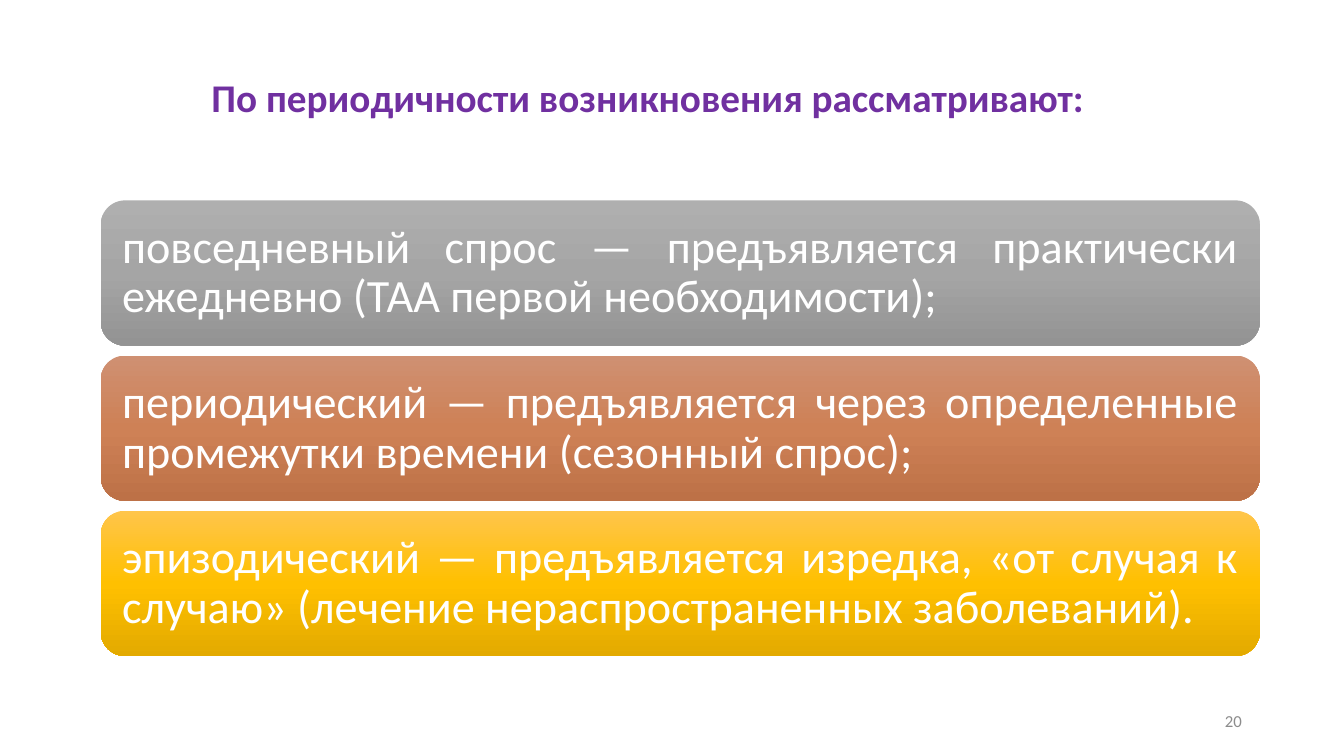
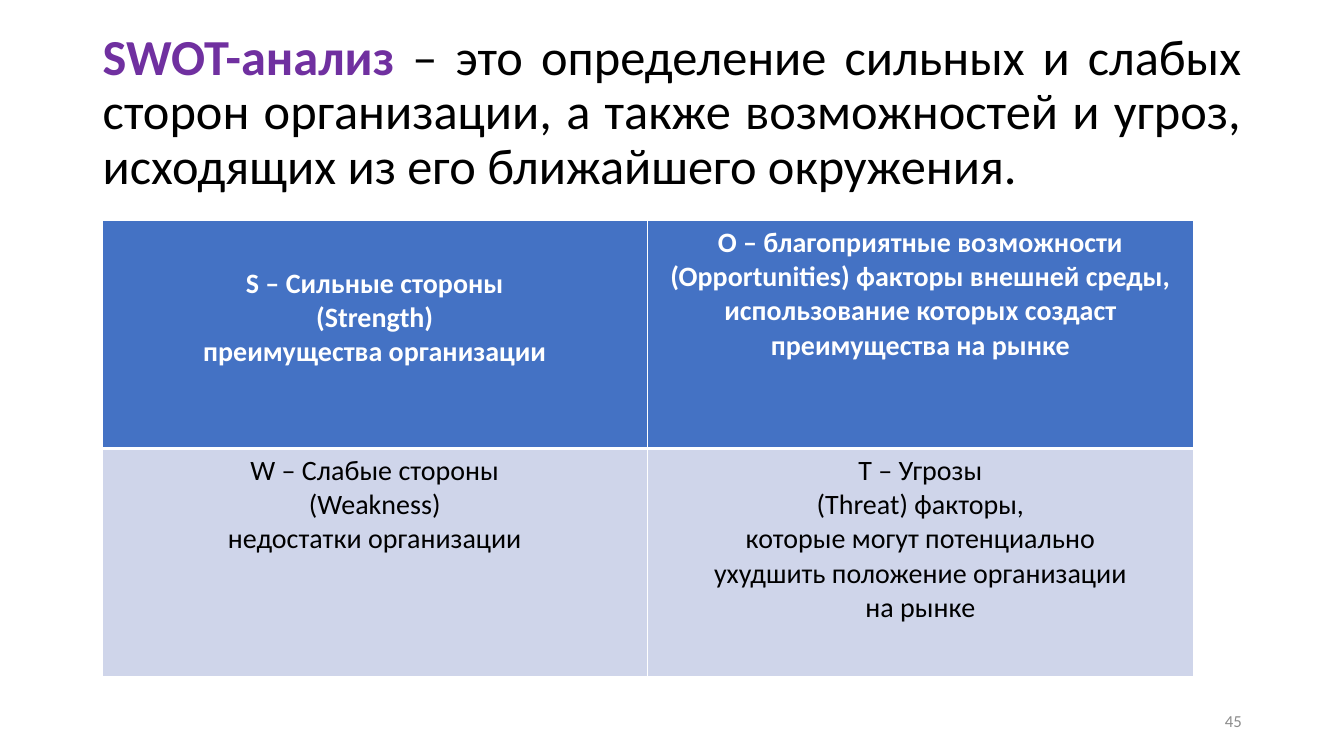
import copy
from lxml import etree
import pptx
import pptx.dml.color
import pptx.enum.shapes
import pptx.enum.text
import pptx.oxml.ns
import pptx.util

Cm = pptx.util.Cm
Pt = pptx.util.Pt
Align = pptx.enum.text.PP_ALIGN
Anchor = pptx.enum.text.MSO_ANCHOR
qn = pptx.oxml.ns.qn


class Theme:
    font = "Calibri"
    accent = "7030A0"
    black = "000000"
    white = "FFFFFF"
    number = "8C8C8C"
    header = "4472C4"
    body = "CFD5EA"
    heading_size = 28
    title_size = 36
    band_size = 33
    cell_size = 20
    number_size = 12


DEMAND_HEADING = "По периодичности возникновения рассматривают:"
DEMAND_BANDS = [
    ("повседневный спрос — предъявляется практически ежедневно (ТАА первой необходимости);",
     ("AFAFAF", "A5A5A5", "939393")),
    ("периодический — предъявляется через определенные промежутки времени (сезонный спрос);",
     ("CF9072", "CE8156", "BD7147")),
    ("эпизодический — предъявляется изредка, «от случая к случаю» (лечение нераспространенных заболеваний).",
     ("FFC54B", "FFC000", "E3AA00")),
]
SWOT_TERM = "SWOT-анализ"
SWOT_DEFINITION = (" – это определение сильных и слабых сторон организации, "
                   "а также возможностей и угроз, исходящих из его ближайшего окружения.")
SWOT_CELLS = [
    [
        ["S – Сильные стороны", "(Strength)", "преимущества организации"],
        ["О – благоприятные возможности", "(Opportunities) факторы внешней среды,",
         "использование которых создаст", "преимущества на рынке"],
    ],
    [
        ["W – Слабые стороны", "(Weakness)", "недостатки организации"],
        ["Т – Угрозы", "(Threat) факторы,", "которые могут потенциально",
         "ухудшить положение организации", "на рынке"],
    ],
]
SWOT_ROWS = [
    {"fill": Theme.header, "text": Theme.white, "bold": True, "top": 1, "bottom": 3},
    {"fill": Theme.body, "text": Theme.black, "bold": False, "top": 3, "bottom": 1},
]
STRENGTH_TOP_MARGIN = Cm(1.16)


def rgb(color):
    return pptx.dml.color.RGBColor.from_string(color)


def apply_format(target, values):
    for name, value in values.items():
        setattr(target, name, value)


def add_para(frame, spans, size, first=True, **layout):
    para = frame.paragraphs[0] if first else frame.add_paragraph()
    apply_format(para, layout)
    for text, color, bold in spans:
        span = para.add_run()
        span.text = text
        apply_format(span.font, {"name": Theme.font, "size": Pt(size), "bold": bold})
        span.font.color.rgb = rgb(color)


def add_text(page, place, spans, size, wrap=True, anchor=Anchor.MIDDLE, **layout):
    box = page.shapes.add_textbox(*map(Cm, place))
    apply_format(box.text_frame, {"word_wrap": wrap, "vertical_anchor": anchor})
    add_para(box.text_frame, spans, size, **layout)


def add_page(deck, number):
    page = deck.slides.add_slide(deck.slide_layouts[6])
    add_text(page, (23.93, 17.65, 7.62, 1.01), [(number, Theme.number, False)],
             Theme.number_size, alignment=Align.RIGHT)
    return page


def fill_gradient(shape, colors):
    shape.fill.gradient()
    shape.fill.gradient_angle = 270
    stop_list = shape._element.spPr.find(qn("a:gradFill")).find(qn("a:gsLst"))
    stop_list.append(copy.deepcopy(stop_list[0]))
    for index, (stop, color) in enumerate(zip(shape.fill.gradient_stops, colors)):
        stop.position = index / (len(colors) - 1)
        stop.color.rgb = rgb(color)


def add_band(page, top, text, colors):
    band = page.shapes.add_shape(pptx.enum.shapes.MSO_SHAPE.ROUNDED_RECTANGLE,
                                 Cm(2.54), Cm(top), Cm(29.21), Cm(3.66))
    band.shadow.inherit = False
    band.line.fill.background()
    fill_gradient(band, colors)
    margins = {"margin_" + side: Cm(0.36) for side in ("left", "top", "right", "bottom")}
    apply_format(band.text_frame,
                 {"word_wrap": True, "vertical_anchor": Anchor.MIDDLE, **margins})
    add_para(band.text_frame, [(text, Theme.white, False)], Theme.band_size,
             alignment=Align.JUSTIFY, line_spacing=0.9)


def add_borders(cell, top, bottom):
    properties = cell._tc.get_or_add_tcPr()
    for tag, width in (("lnL", 1), ("lnR", 1), ("lnT", top), ("lnB", bottom)):
        line = etree.SubElement(properties, qn("a:" + tag), w=str(Pt(width)))
        fill = etree.SubElement(line, qn("a:solidFill"))
        etree.SubElement(fill, qn("a:srgbClr"), val=Theme.white)


def add_swot_table(page):
    table = page.shapes.add_table(len(SWOT_CELLS), len(SWOT_CELLS[0]),
                                  Cm(2.57), Cm(5.56), Cm(27.5), Cm(11.48)).table
    for row, (contents, style) in enumerate(zip(SWOT_CELLS, SWOT_ROWS)):
        for column, lines in enumerate(contents):
            cell = table.cell(row, column)
            add_borders(cell, style["top"], style["bottom"])
            cell.fill.solid()
            cell.fill.fore_color.rgb = rgb(style["fill"])
            for index, text in enumerate(lines):
                add_para(cell.text_frame, [(text, style["text"], style["bold"])],
                         Theme.cell_size, first=index == 0, alignment=Align.CENTER)
    table.cell(0, 0).margin_top = STRENGTH_TOP_MARGIN


def build_demand_page(deck):
    page = add_page(deck, "20")
    add_text(page, (5.08, 1.73, 22.73, 1.45), [(DEMAND_HEADING, Theme.accent, True)],
             Theme.heading_size, wrap=False, anchor=Anchor.TOP, alignment=Align.LEFT)
    for index, (text, colors) in enumerate(DEMAND_BANDS):
        add_band(page, 5.05 + index * 3.91, text, colors)


def build_swot_page(deck):
    page = add_page(deck, "45")
    add_text(page, (2.34, 1.02, 29.21, 3.68),
             [(SWOT_TERM, Theme.accent, True), (SWOT_DEFINITION, Theme.black, False)],
             Theme.title_size, alignment=Align.JUSTIFY, line_spacing=0.9)
    add_swot_table(page)


def main():
    deck = pptx.Presentation()
    apply_format(deck, {"slide_width": Cm(33.87), "slide_height": Cm(19.05)})
    build_demand_page(deck)
    build_swot_page(deck)
    deck.save("out.pptx")


if __name__ == "__main__":
    main()
